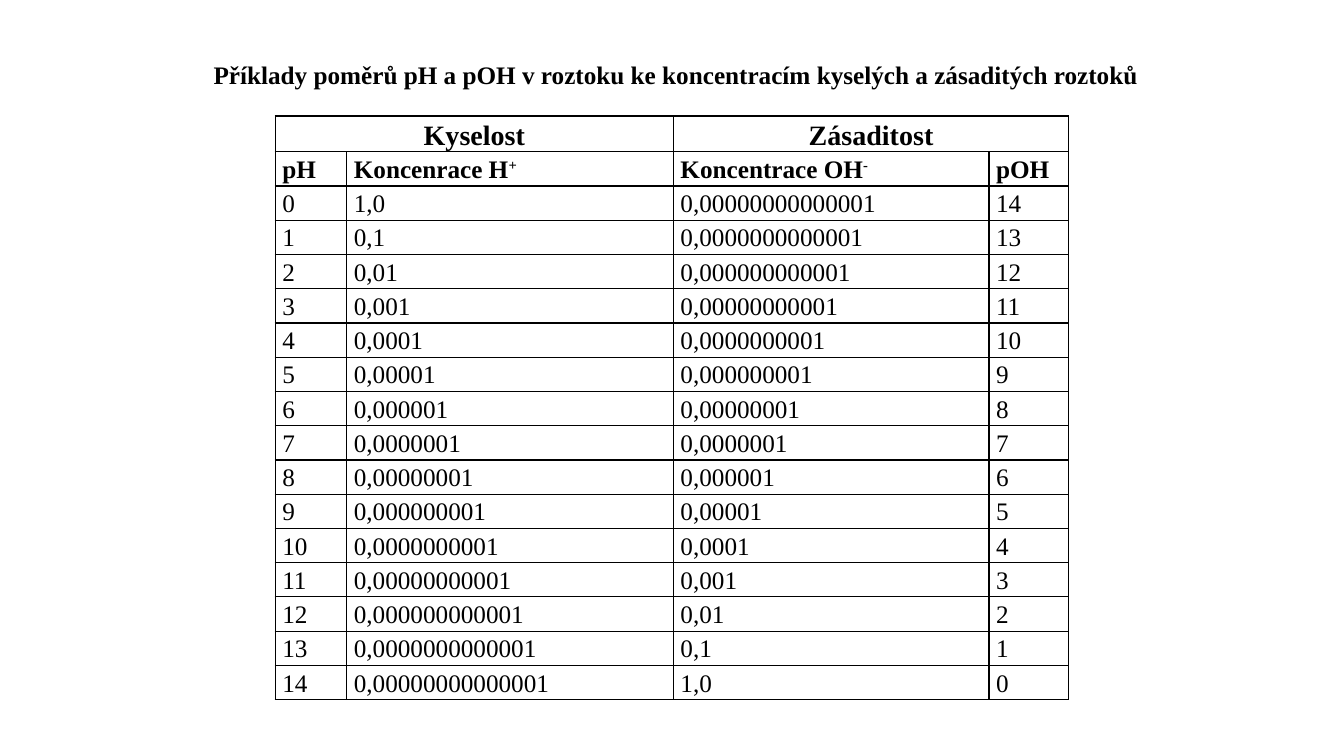
from lxml import etree
from pptx import Presentation
from pptx import util as u
from pptx.dml.color import RGBColor
from pptx.enum import text
from pptx.oxml.ns import qn

BLACK = RGBColor(0, 0, 0)
FONT = "Times New Roman"
COL_WIDTHS = (0.71, 3.24, 3.13, 0.79)
ROW_HEIGHT = 0.34
MAX_PH = 14
TITLE = "Příklady poměrů pH a pOH v roztoku ke koncentracím kyselých a zásaditých roztoků"


def style_run(r, size, bold, baseline=0):
    """Format one run, raised by a percentage when baseline is given."""
    r.font.name, r.font.size, r.font.bold = FONT, u.Pt(size), bold
    r.font.color.rgb = BLACK
    if baseline:
        r._r.get_or_add_rPr().set("baseline", str(baseline * 1000))


def add_borders(cell, width=1):
    """Draw a black line on all four sides of a cell."""
    tcPr = cell._tc.get_or_add_tcPr()
    for i, side in enumerate(("lnL", "lnR", "lnT", "lnB")):
        ln = etree.Element(qn(f"a:{side}"), w=str(u.Pt(width)))
        fill = etree.SubElement(ln, qn("a:solidFill"))
        etree.SubElement(fill, qn("a:srgbClr"), val=str(BLACK))
        tcPr.insert(i, ln)


def fill_cell(cell, words, size=18, bold=False, align=text.PP_ALIGN.JUSTIFY, sup=""):
    """Write a cell's text with an optional superscript ending."""
    cell.margin_left = cell.margin_right = u.Inches(0.07)
    cell.margin_top = cell.margin_bottom = 0
    p = cell.text_frame.paragraphs[0]
    p.text = words
    p.alignment, p.line_spacing = align, 1.15
    style_run(p.runs[0], size, bold)
    if sup:
        r = p.add_run()
        r.text = sup
        style_run(r, size, bold, 30)


def concentration(n):
    """Return ten to the power of minus n as a decimal with a comma."""
    return "0," + "0" * (n - 1) + "1" if n else "1,0"


def add_title(s, x, y, w, h):
    """Place the bold heading in its box."""
    tf = s.shapes.add_textbox(*map(u.Inches, (x, y, w, h))).text_frame
    tf.word_wrap = True
    tf.margin_top = u.Inches(0.07)
    tf.text = TITLE
    style_run(tf.paragraphs[0].runs[0], 18, True)


def add_ph_table(s, x, y):
    """Place the table of pH and pOH with its two header rows."""
    rows = MAX_PH + 3
    size = (sum(COL_WIDTHS), rows * ROW_HEIGHT)
    table = s.shapes.add_table(rows, len(COL_WIDTHS), *map(u.Inches, (x, y, *size))).table
    table.first_row = table.horz_banding = False
    for col, width in zip(table.columns, COL_WIDTHS):
        col.width = u.Inches(width)
    for row in table.rows:
        row.height = u.Inches(ROW_HEIGHT)
    for cell in table.iter_cells():
        cell.fill.background()
        add_borders(cell)

    for c, group in ((0, "Kyselost"), (2, "Zásaditost")):
        table.cell(0, c).merge(table.cell(0, c + 1))
        fill_cell(table.cell(0, c), group, 20, True, text.PP_ALIGN.CENTER)
    heads = (("pH", ""), ("Koncenrace H", "+"), ("Koncentrace OH", "-"), ("pOH", ""))
    for c, (head, sup) in enumerate(heads):
        fill_cell(table.cell(1, c), head, bold=True, sup=sup)
    for ph in range(MAX_PH + 1):
        poh = MAX_PH - ph
        values = (str(ph), concentration(ph), concentration(poh), str(poh))
        for c, value in enumerate(values):
            fill_cell(table.cell(ph + 2, c), value)


def main():
    """Build the slide and save it."""
    prs = Presentation()
    prs.slide_width, prs.slide_height = u.Inches(13.33), u.Inches(7.5)
    s = prs.slides.add_slide(prs.slide_layouts[6])
    add_ph_table(s, 2.73, 1.15)
    add_title(s, 2.02, 0.52, 9.53, 0.71)
    prs.save("out.pptx")


if __name__ == "__main__":
    main()
